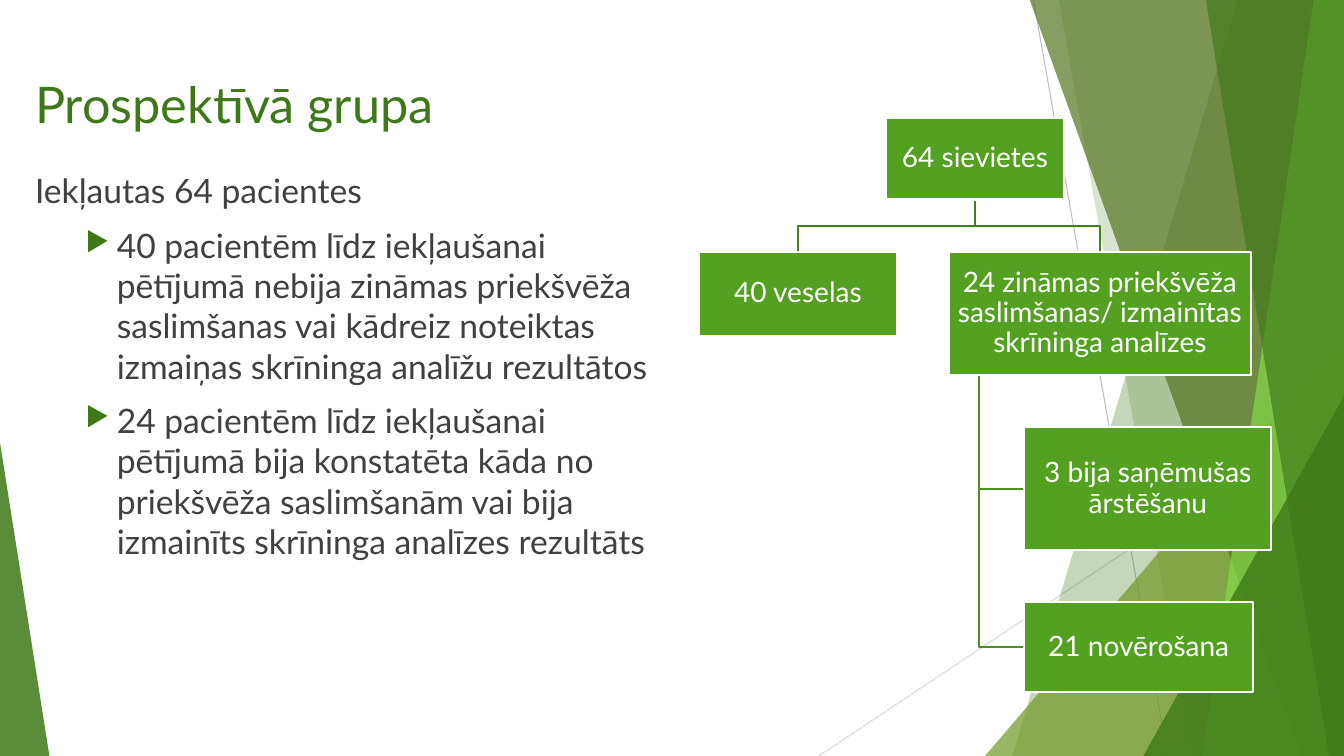
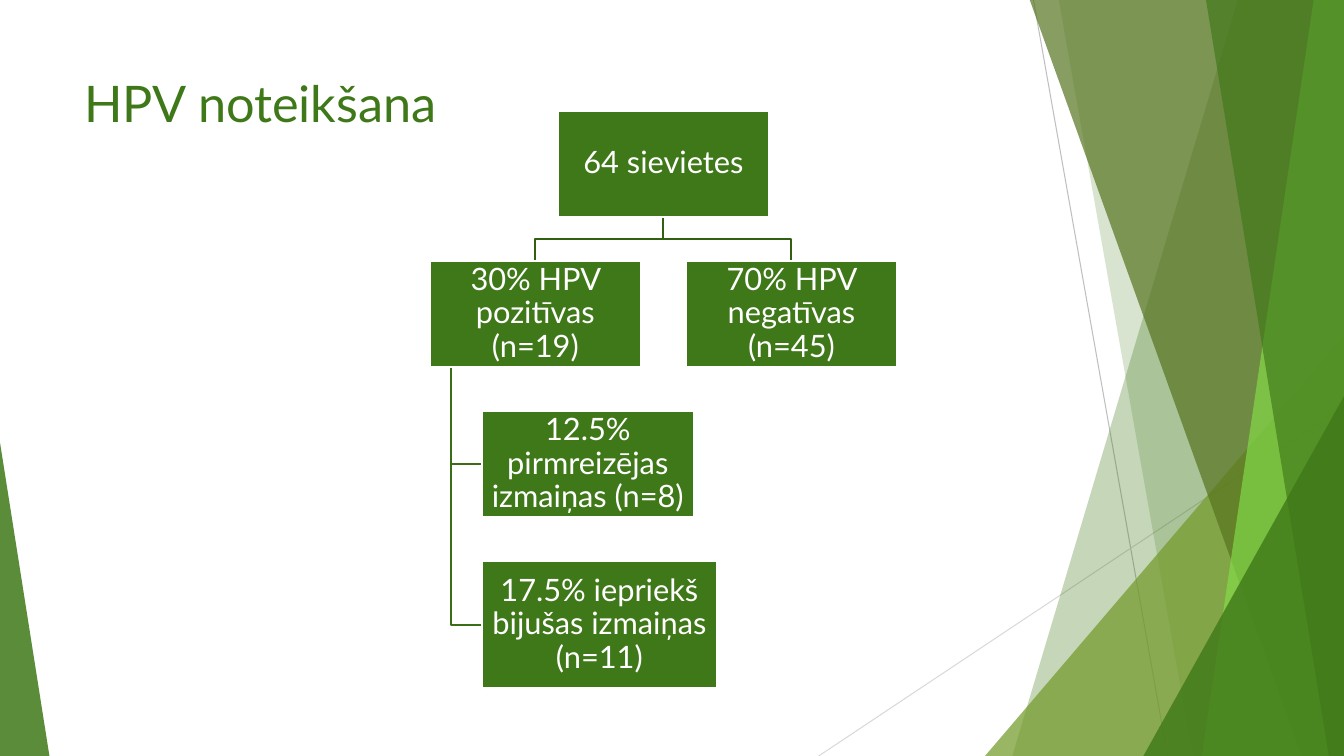
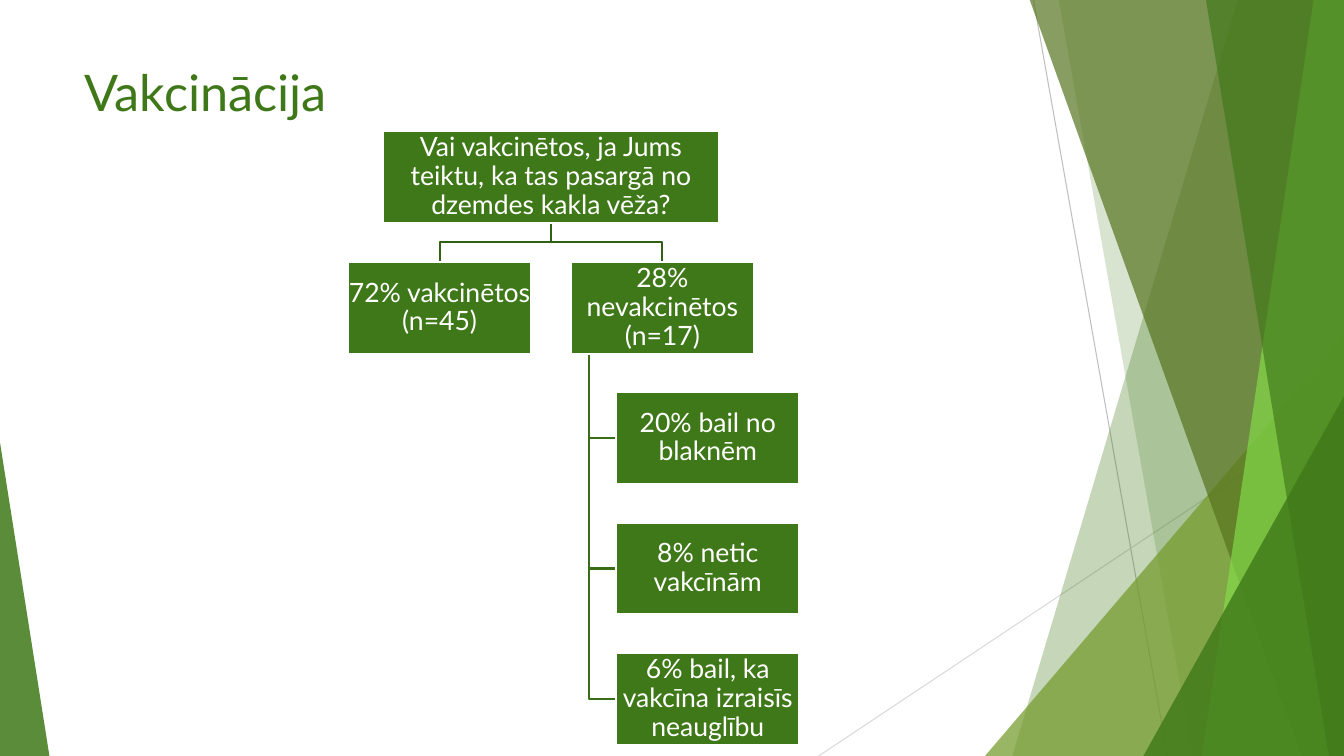
from pptx import Presentation
from pptx.dml.color import RGBColor
from pptx.enum.shapes import MSO_CONNECTOR, MSO_SHAPE
from pptx.enum.text import MSO_ANCHOR, PP_ALIGN
from pptx.oxml.ns import qn
from pptx.util import Inches, Pt
from lxml.etree import SubElement

FONT = "Lato"
GREEN, LEAF, WHITE, BODY = "3F7818", "54A021", "FFFFFF", "404040"
TOP, RIGHT, BOTTOM = -0.01, 13.33, 7.5


def paint(shape, fill=None, line=None, alpha=100):
    shape.shadow.inherit = False
    if fill:
        shape.fill.solid()
        shape.fill.fore_color.rgb = RGBColor.from_string(fill)
        if alpha < 100:
            color = shape.fill._xPr.find(qn("a:solidFill"))[0]
            SubElement(color, qn("a:alpha"), val=str(alpha * 1000))
    else:
        shape.fill.background()
    if line:
        shape.line.color.rgb = RGBColor.from_string(line)
        shape.line.width = Pt(1.5)
    else:
        shape.line.fill.background()


def add_run(paragraph, text, size, color):
    run = paragraph.add_run()
    run.text = text
    run.font.name = FONT
    run.font.size = Pt(size)
    run.font.color.rgb = RGBColor.from_string(color)


prs = Presentation()
prs.slide_width, prs.slide_height = Inches(RIGHT), Inches(BOTTOM)
blank = prs.slide_layouts[6]
for placeholder in list(blank.placeholders):
    placeholder.element.getparent().remove(placeholder.element)

slides = [prs.slides.add_slide(blank) for _ in range(3)]

# Shared facets: drawn once, then moved to the layout
facets = slides[0].shapes

for x1, y1, x2, y2, color in [
    (10.25, 0, 11.58, BOTTOM, "BFBFBF"),
    (RIGHT, 4.03, 8.12, BOTTOM, "D9D9D9"),
]:
    ray = facets.add_connector(
        MSO_CONNECTOR.STRAIGHT, Inches(x1), Inches(y1), Inches(x2), Inches(y2))
    ray.line.color.rgb = RGBColor.from_string(color)
    ray.line.width = Pt(0.75)
    SubElement(ray.element.spPr, qn("a:effectLst"))

# A band has a top and a bottom x and runs to the right edge;
# a wedge has a box and the place of its tip
for kind, place, color, alpha in [
    ("band", (12.28, 10.04), GREEN, 30),
    ("band", (10.5, 11.83), GREEN, 20),
    ("wedge", (9.77, 3.33, 3.56, 1), "739A29", 72),
    ("band", (10.21, 12.91), "56741F", 70),
    ("band", (13.03, 11.92), "83DA48", 70),
    ("band", (11.96, 13.18), GREEN, 65),
    ("wedge", (11.34, 3.93, 1.99, 1), GREEN, 80),
    ("wedge", (0, 4.39, 0.49, 0), GREEN, 85),
]:
    if kind == "band":
        top_x, bottom_x = place
        outline = facets.build_freeform(Inches(top_x), Inches(TOP))
        outline.add_line_segments(
            [(Inches(x), Inches(y)) for x, y in
             [(RIGHT, TOP), (RIGHT, BOTTOM), (bottom_x, BOTTOM)]], close=True)
        facet = outline.convert_to_shape()
    else:
        left, top, width, tip = place
        facet = facets.add_shape(
            MSO_SHAPE.ISOSCELES_TRIANGLE, Inches(left), Inches(top),
            Inches(width), Inches(BOTTOM - top))
        facet.adjustments[0] = tip
    paint(facet, color, alpha=alpha)

for facet in list(facets):
    blank.shapes.element.append(facet.element)

# Titles
for slide, (title, left, top, width) in zip(slides, [
    ("Prospektīvā grupa", 0.25, 0.68, 11.5),
    ("HPV noteikšana", 0.74, 0.67, 9.4),
    ("Vakcinācija", 0.74, 0.56, 9.4),
]):
    heading = slide.shapes.add_textbox(
        Inches(left), Inches(top), Inches(width), Inches(1.44)).text_frame
    heading.word_wrap = True
    add_run(heading.paragraphs[0], title, 36, GREEN)

# Slide 1: patient groups in words
summary = slides[0].shapes.add_textbox(
    Inches(0.25), Inches(1.64), Inches(6.58), Inches(5.18)).text_frame
summary.word_wrap = True
add_run(summary.paragraphs[0], "Iekļautas 64 pacientes", 24, BODY)
for group in [
    "40 pacientēm līdz iekļaušanai pētījumā nebija zināmas priekšvēža "
    "saslimšanas vai kādreiz noteiktas izmaiņas skrīninga analīžu rezultātos",
    "24 pacientēm līdz iekļaušanai pētījumā bija konstatēta kāda no "
    "priekšvēža saslimšanām vai bija izmainīts skrīninga analīzes rezultāts",
]:
    item = summary.add_paragraph()
    item.level = 1
    item.space_before = Pt(10)
    props = item._p.get_or_add_pPr()
    props.set("marL", str(Inches(0.81)))
    props.set("indent", str(Inches(-0.31)))
    SubElement(SubElement(props, qn("a:buClr")), qn("a:srgbClr"), val=GREEN)
    SubElement(props, qn("a:buSzPct"), val="80000")
    SubElement(props, qn("a:buChar"), char="▶")
    add_run(item, group, 24, BODY)

# Trees: a root, its branches, and leaves hanging from one branch.
# Each node is (left, top, width, height, text).
trees = [
    dict(fill=LEAF, fork="43801A", trunk="4C911E", size=20, inset=0.01, parent=1,
         root=(8.79, 1.17, 1.76, 0.81, "64 sievietes"),
         branches=[
             (6.93, 2.5, 1.97, 0.83, "40 veselas"),
             (9.41, 2.5, 3, 1.22, "24 zināmas priekšvēža saslimšanas/ "
                                  "izmainītas skrīninga analīzes")],
         leaves=[
             (10.16, 4.24, 2.45, 1.22, "3 bija saņēmušas ārstēšanu"),
             (10.16, 5.97, 2.27, 0.9, "21 novērošana")]),
    dict(fill=GREEN, fork="326013", trunk="396D16", size=22, inset=0.02, parent=0,
         root=(5.53, 1.1, 2.1, 1.05, "64 sievietes"),
         branches=[
             (4.26, 2.59, 2.1, 1.05, "30% HPV pozitīvas (n=19)"),
             (6.8, 2.59, 2.1, 1.05, "70% HPV negatīvas (n=45)")],
         leaves=[
             (4.78, 4.08, 2.1, 1.05, "12.5% pirmreizējas izmaiņas (n=8)"),
             (4.78, 5.57, 2.33, 1.26, "17.5% iepriekš bijušas izmaiņas (n=11)")]),
    dict(fill=GREEN, fork="326013", trunk="396D16", size=19, inset=0.01, parent=1,
         root=(3.8, 1.3, 3.33, 0.91, "Vai vakcinētos, ja Jums teiktu, ka tas "
                                     "pasargā no dzemdes kakla vēža?"),
         branches=[
             (3.45, 2.6, 1.82, 0.91, "72% vakcinētos (n=45)"),
             (5.66, 2.6, 1.82, 0.91, "28% nevakcinētos (n=17)")],
         leaves=[
             (6.11, 3.89 + 1.295 * row, 1.82, 0.91, reason)
             for row, reason in enumerate([
                 "20% bail no blaknēm",
                 "8% netic vakcīnām",
                 "6% bail, ka vakcīna izraisīs neauglību"])]),
]

for slide, tree in zip(slides, trees):
    root, branches, leaves = tree["root"], tree["branches"], tree["leaves"]

    # Trunk one tenth into the parent branch; fork halfway below the root
    left, top, width, height, _ = branches[tree["parent"]]
    trunk_x, trunk_y = left + width / 10, top + height
    routes = []
    for left, top, width, height, _ in leaves:
        middle = top + height / 2
        routes.append((tree["trunk"], [
            (trunk_x, trunk_y), (trunk_x, middle), (left, middle)]))
    root_x, root_y = root[0] + root[2] / 2, root[1] + root[3]
    for left, top, width, height, _ in branches:
        center, fork_y = left + width / 2, (root_y + top) / 2
        routes.append((tree["fork"], [
            (root_x, root_y), (root_x, fork_y), (center, fork_y), (center, top)]))

    for color, points in routes:
        start, *turns = [(Inches(x), Inches(y)) for x, y in points]
        route = slide.shapes.build_freeform(*start)
        route.add_line_segments(turns, close=False)
        paint(route.convert_to_shape(), line=color)

    for left, top, width, height, text in [root, *branches, *leaves]:
        node = slide.shapes.add_shape(
            MSO_SHAPE.RECTANGLE, Inches(left), Inches(top),
            Inches(width), Inches(height))
        paint(node, tree["fill"], WHITE)
        frame = node.text_frame
        frame.word_wrap = True
        frame.vertical_anchor = MSO_ANCHOR.MIDDLE
        frame.margin_left = frame.margin_right = Inches(tree["inset"])
        frame.margin_top = frame.margin_bottom = Inches(tree["inset"])
        label = frame.paragraphs[0]
        label.alignment = PP_ALIGN.CENTER
        label.line_spacing = 0.9
        add_run(label, text, tree["size"], WHITE)

prs.save("out.pptx")
